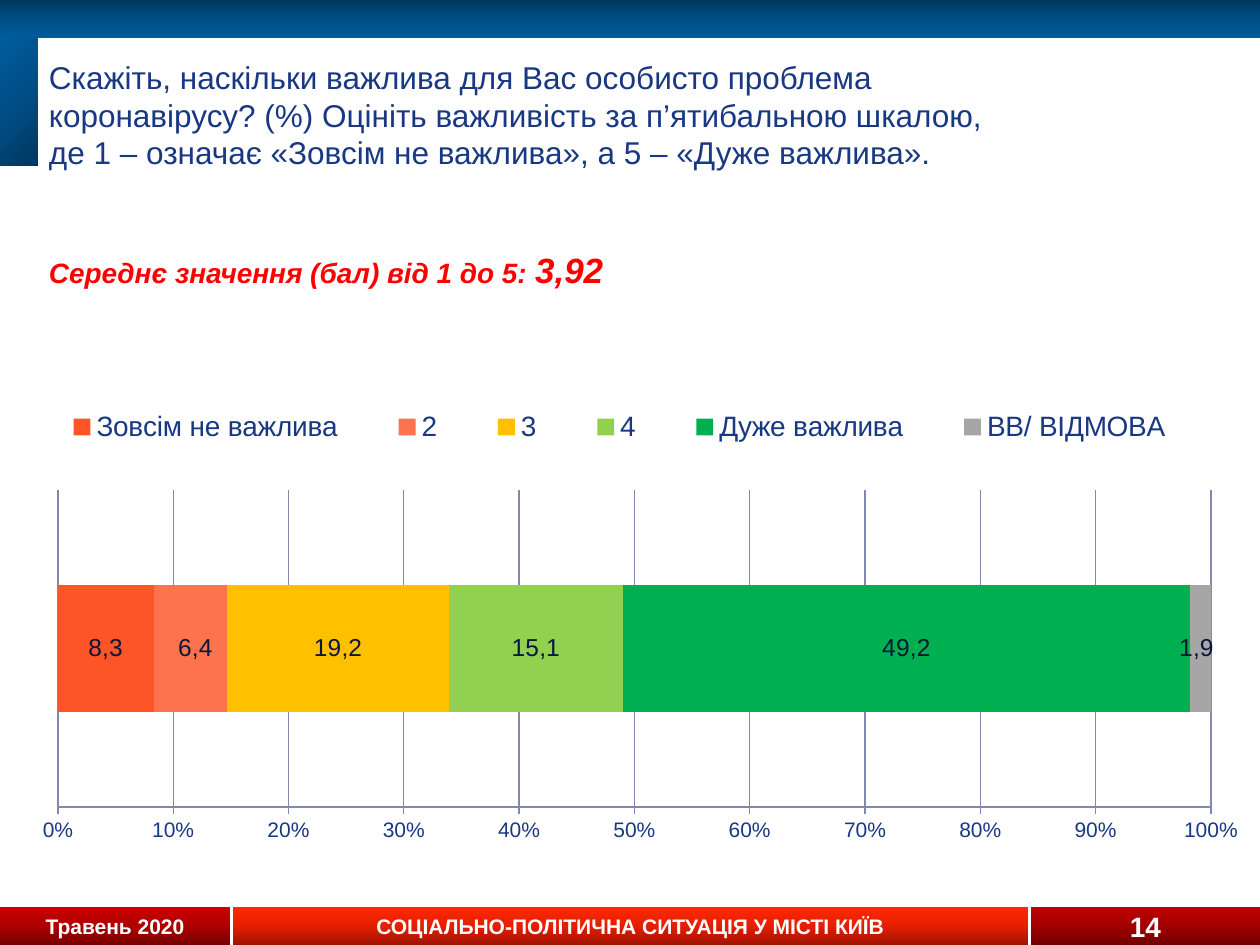
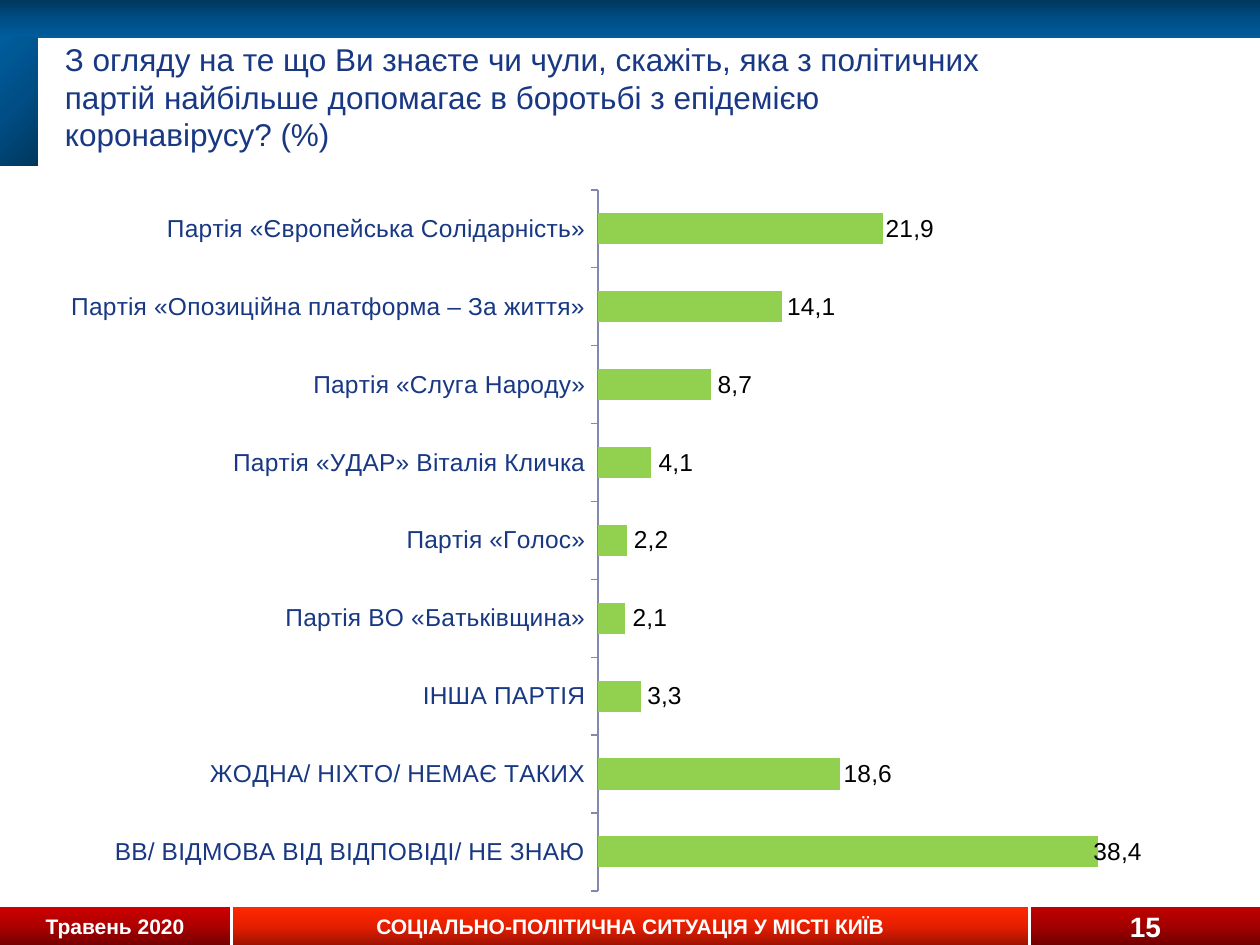
from pptx import Presentation
from pptx.chart.data import CategoryChartData
from pptx.dml.color import RGBColor
from pptx.enum.chart import XL_CHART_TYPE, XL_LABEL_POSITION, XL_LEGEND_POSITION, XL_TICK_MARK
from pptx.enum.shapes import MSO_SHAPE
from pptx.enum.text import MSO_ANCHOR, MSO_AUTO_SIZE, PP_ALIGN
from pptx.oxml import parse_xml
from pptx.oxml.ns import nsdecls, qn
from pptx.util import Pt

RECT = MSO_SHAPE.RECTANGLE
MIDDLE = MSO_ANCHOR.MIDDLE
NO_AUTOFIT = MSO_AUTO_SIZE.NONE
LEFT, CENTER = PP_ALIGN.LEFT, PP_ALIGN.CENTER
STACKED, STACKED_100 = XL_CHART_TYPE.BAR_STACKED, XL_CHART_TYPE.BAR_STACKED_100
LABEL_CENTER, LABEL_INSIDE_END = XL_LABEL_POSITION.CENTER, XL_LABEL_POSITION.INSIDE_END
LEGEND_RIGHT = XL_LEGEND_POSITION.RIGHT
TICK_OUT = XL_TICK_MARK.OUTSIDE

SCALE = 914400 / 126
FONT = "Arial"
PERCENT = "###0.0%"
COLORS = {
    "white": "FFFFFF", "black": "000000", "navy": "183883", "ink": "091738",
    "red": "FF0000", "axis": "8389AE",
    "scale_1": "FD5527", "scale_2": "FD734D", "scale_3": "FFC000",
    "scale_4": "92D050", "scale_5": "00B050", "no_answer": "A6A6A6",
}
GRADIENTS = {
    "blue": ("00375E", "004E85", "005D9E"),
    "date": ("770000", "AD0000", "CE0000"),
    "topic": ("A01200", "E61F00", "FF2800"),
    "page": ("720000", "A20000", "C00000"),
}
IMPORTANCE = [
    ("Зовсім не важлива", 0.083, "8,3", "scale_1", 0),
    ("2", 0.064, "6,4", "scale_2", 5),
    ("3", 0.192, "19,2", "scale_3", 0),
    ("4", 0.151, "15,1", "scale_4", 0),
    ("Дуже важлива", 0.492, "49,2", "scale_5", 0),
    ("ВВ/ ВІДМОВА", 0.018, "1,9", "no_answer", -4),
]
PARTIES = [
    ("ВВ/ ВІДМОВА ВІД ВІДПОВІДІ/ НЕ ЗНАЮ", 0.384, 49),
    ("ЖОДНА/ НІХТО/ НЕМАЄ ТАКИХ", 0.186, 57),
    ("ІНША ПАРТІЯ", 0.033, 46),
    ("Партія ВО «Батьківщина»", 0.021, 47),
    ("Партія «Голос»", 0.022, 47),
    ("Партія «УДАР» Віталія Кличка", 0.041, 47),
    ("Партія «Слуга Народу»", 0.087, 46),
    ("Партія «Опозиційна платформа – За життя»", 0.141, 59),
    ("Партія «Європейська Солідарність»", 0.219, 56),
]


def px(length):
    return round(length * SCALE)


def to_emu(box):
    return [px(length) for length in box]


def rgb(name):
    return RGBColor.from_string(COLORS[name])


def style(font, size, color, bold=False, italic=False):
    font.name = FONT
    font.size = Pt(size)
    font.bold = bold
    font.italic = italic
    font.color.rgb = rgb(color)


def add_band(slide, box, gradient, angle, caption="", size=12):
    band = slide.shapes.add_shape(RECT, *to_emu(box))
    band.shadow.inherit = False
    stops = "".join(
        f'<a:gs pos="{place * 50000}"><a:srgbClr val="{color}"/></a:gs>'
        for place, color in enumerate(GRADIENTS[gradient])
    )
    band.element.spPr.insert(2, parse_xml(
        f'<a:gradFill {nsdecls("a")} rotWithShape="1"><a:gsLst>{stops}</a:gsLst>'
        f'<a:lin ang="{angle * 60000}" scaled="0"/></a:gradFill>'
    ))
    band.line.fill.background()
    if caption:
        frame = band.text_frame
        frame.text = caption
        frame.word_wrap = True
        frame.vertical_anchor = MIDDLE
        frame.margin_top = frame.margin_bottom = 0
        frame.paragraphs[0].alignment = CENTER
        style(frame.paragraphs[0].runs[0].font, size, "white", bold=True)


def add_frame(slide, page):
    add_band(slide, (0, 0, 1260, 38), "blue", 90)
    add_band(slide, (0, 37, 38, 129), "blue", 225)
    add_band(slide, (0, 907, 230, 38), "date", 270, "Травень 2020")
    add_band(slide, (233, 907, 795, 38), "topic", 270,
             "СОЦІАЛЬНО-ПОЛІТИЧНА СИТУАЦІЯ У МІСТІ КИЇВ")
    add_band(slide, (1031, 907, 229, 38), "page", 270, str(page), 16)


def set_question(slide, box, question):
    title = slide.shapes.title
    title.left, title.top, title.width, title.height = to_emu(box)
    frame = title.text_frame
    frame.text = question
    frame.word_wrap = True
    frame.auto_size = NO_AUTOFIT
    frame.vertical_anchor = MIDDLE
    frame.margin_left, frame.margin_right = px(28), px(13)
    frame.margin_top = frame.margin_bottom = px(6)
    frame.paragraphs[0].alignment = LEFT
    style(frame.paragraphs[0].runs[0].font, 18, "navy")
    return frame


def add_average(frame, caption, score):
    paragraph = frame.add_paragraph()
    paragraph.alignment = LEFT
    paragraph.space_before = Pt(44)
    for text, size in ((caption, 16), (score, 20)):
        run = paragraph.add_run()
        run.text = text
        style(run.font, size, "red", bold=True, italic=True)


def set_layout(part, index, box, inner=False, **lengths):
    for old in part.findall(qn("c:layout")):
        part.remove(old)
    target = '<c:layoutTarget val="inner"/>' if inner else ""
    modes = "".join(f'<c:{key}Mode val="edge"/>' for key in "xy") if "w" in lengths else ""
    extents = dict(x=box[2], y=box[3], w=box[2], h=box[3])
    sizes = "".join(f'<c:{key} val="{length / extents[key]:.4f}"/>'
                    for key, length in lengths.items())
    part.insert(index, parse_xml(
        f'<c:layout {nsdecls("c")}><c:manualLayout>{target}{modes}{sizes}'
        "</c:manualLayout></c:layout>"
    ))


def add_bars(slide, box, kind, categories, rows):
    data = CategoryChartData(number_format=PERCENT)
    data.categories = categories
    for name, values in rows:
        data.add_series(name, values)
    chart = slide.shapes.add_chart(kind, *to_emu(box), data).chart
    chart.has_title = False
    chart.has_legend = False
    style(chart.font, 18, "navy")
    bars = chart.plots[0]
    bars.gap_width, bars.overlap = 150, 100
    bars.vary_by_categories = False
    return chart


def style_axis(axis, size):
    axis.major_tick_mark = TICK_OUT
    axis.format.line.color.rgb = rgb("axis")
    style(axis.tick_labels.font, size, "navy")


def style_series(series, fill, labels, ink, position):
    series.format.fill.solid()
    series.format.fill.fore_color.rgb = rgb(fill)
    defaults = series.data_labels
    defaults.show_value = True
    defaults.number_format = PERCENT
    defaults.number_format_is_linked = False
    defaults.position = position
    style(defaults.font, 14, ink, bold=True)
    for index, text in enumerate(labels):
        label = series.points[index].data_label
        label.text_frame.text = text
        style(label.text_frame.paragraphs[0].runs[0].font, 14, ink)
        label.position = position


def shift_labels(chart, box, shifts):
    for part, shift in zip(chart.element.iter(qn("c:dLbl")), shifts):
        if shift:
            set_layout(part, 1, box, x=shift, y=0)


def add_importance_chart(slide, box):
    chart = add_bars(slide, box, STACKED_100, ["1"],
                     [(row[0], [row[1]]) for row in IMPORTANCE])
    for series, (_, _, label, color, _) in zip(chart.plots[0].series, IMPORTANCE):
        style_series(series, color, [label], "ink", LABEL_CENTER)
    shift_labels(chart, box, [row[-1] for row in IMPORTANCE])
    chart.category_axis.visible = False
    shares = chart.value_axis
    style_axis(shares, 12)
    shares.tick_labels.number_format = "0%"
    shares.tick_labels.number_format_is_linked = False
    shares.has_major_gridlines = True
    shares.major_gridlines.format.line.color.rgb = rgb("axis")
    chart.has_legend = True
    legend = chart.legend
    legend.position = LEGEND_RIGHT
    legend.include_in_layout = False
    style(legend.font, 16, "navy")
    legend_part = chart.element.find(".//" + qn("c:legend"))
    legend_index = 1 if legend_part.find(qn("c:legendPos")) is not None else 0
    set_layout(legend_part, legend_index, box, x=1, y=24, w=1195, h=52)
    set_layout(chart.element.find(".//" + qn("c:plotArea")), 0, box, inner=True,
               x=37, y=113, w=1153, h=317)


def add_party_chart(slide, box):
    names, values, shifts = zip(*PARTIES)
    chart = add_bars(slide, box, STACKED, names, [("Series 1", values)])
    labels = [f"{value * 100:.1f}".replace(".", ",") for value in values]
    style_series(chart.plots[0].series[0], "scale_4", labels, "black", LABEL_INSIDE_END)
    shift_labels(chart, box, shifts)
    style_axis(chart.category_axis, 14)
    shares = chart.value_axis
    shares.minimum_scale, shares.maximum_scale = 0, 0.45
    shares.has_major_gridlines = False
    shares.visible = False
    set_layout(chart.element.find(".//" + qn("c:plotArea")), 0, box, inner=True,
               x=556, y=7, w=586, h=701)


def importance_slide(slide):
    add_frame(slide, 14)
    question = set_question(
        slide, (21, 45, 988, 258),
        "Скажіть, наскільки важлива для Вас особисто проблема коронавірусу? (%) "
        "Оцініть важливість за п’ятибальною шкалою, де 1 – означає "
        "«Зовсім не важлива», а 5 – «Дуже важлива».")
    add_average(question, "Середнє значення (бал) від 1 до 5: ", "3,92")
    add_importance_chart(slide, (21, 377, 1232, 474))


def party_slide(slide):
    add_frame(slide, 15)
    set_question(
        slide, (37, 38, 974, 117),
        "З огляду на те що Ви знаєте чи чули, скажіть, яка з політичних партій "
        "найбільше допомагає в боротьбі з епідемією коронавірусу? (%)")
    add_party_chart(slide, (42, 183, 1171, 709))


def main():
    deck = Presentation()
    deck.slide_width, deck.slide_height = px(1260), px(945)
    for build in (importance_slide, party_slide):
        build(deck.slides.add_slide(deck.slide_layouts[5]))
    deck.save("out.pptx")


if __name__ == "__main__":
    main()
